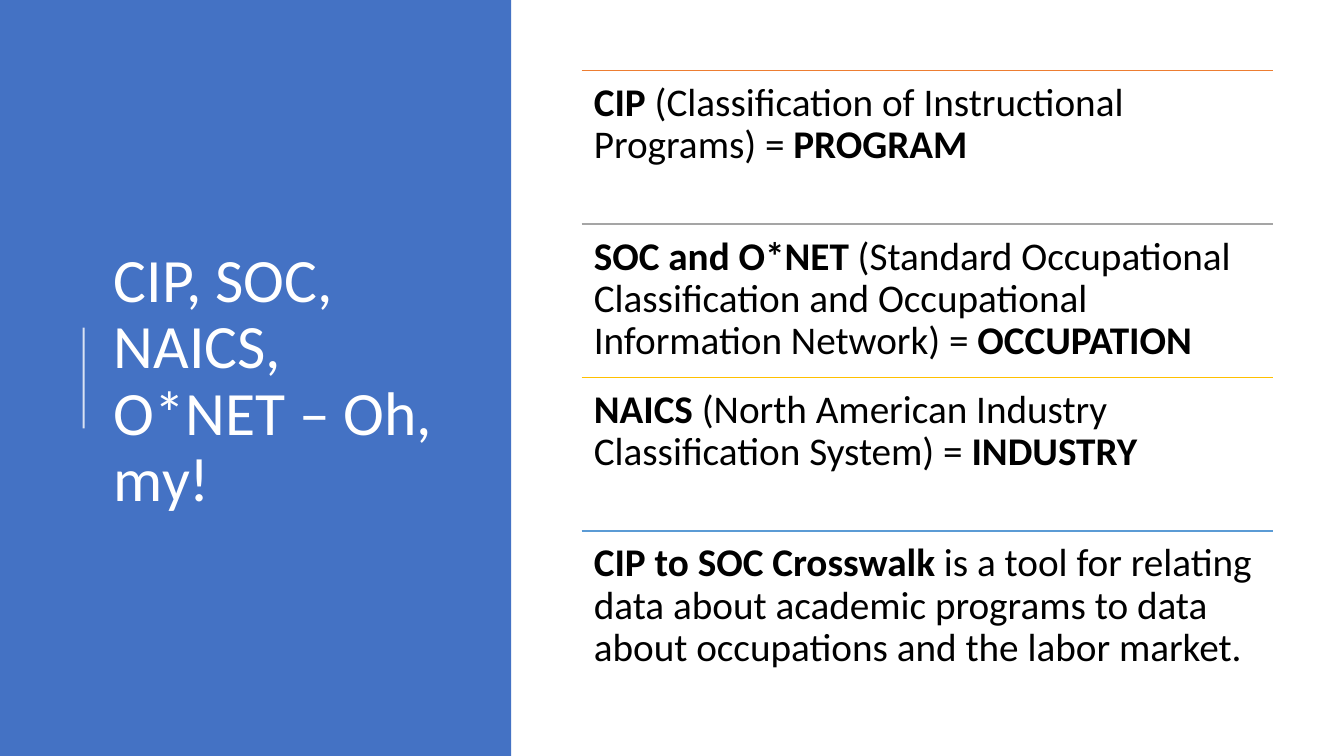
from dataclasses import dataclass

from lxml import etree
from pptx import Presentation
from pptx.dml.color import RGBColor
from pptx.enum.shapes import MSO_CONNECTOR, MSO_SHAPE
from pptx.enum.text import MSO_ANCHOR, MSO_AUTO_SIZE, PP_ALIGN
from pptx.oxml.ns import qn
from pptx.shapes.connector import Connector
from pptx.slide import Slide
from pptx.text.text import Font
from pptx.util import Inches, Pt

STRAIGHT = MSO_CONNECTOR.STRAIGHT
RECTANGLE = MSO_SHAPE.RECTANGLE
MIDDLE = MSO_ANCHOR.MIDDLE
LEFT = PP_ALIGN.LEFT
NO_AUTOFIT = MSO_AUTO_SIZE.NONE

BLUE = RGBColor(0x44, 0x72, 0xC4)
WHITE = RGBColor(0xFF, 0xFF, 0xFF)
BLACK = RGBColor(0x00, 0x00, 0x00)
ORANGE = RGBColor(0xED, 0x7D, 0x31)
GRAY = RGBColor(0xA5, 0xA5, 0xA5)
GOLD = RGBColor(0xFF, 0xC0, 0x00)
LIGHT_BLUE = RGBColor(0x5B, 0x9B, 0xD5)

FONT_NAME = "Calibri"
LINE_SPACING = 0.9
PAGE_WIDTH, PAGE_HEIGHT = Inches(13.33), Inches(7.5)
PANEL_WIDTH = Inches(5.07)
ACCENT_LEFT, ACCENT_TOP, ACCENT_BOTTOM = Inches(0.83), Inches(3.25), Inches(4.25)
LIST_LEFT, LIST_TOP, LIST_WIDTH = Inches(5.77), Inches(0.7), Inches(6.86)
ROW_HEIGHT = Inches(6.09) // 4
ROW_INSET = Inches(0.12)


@dataclass(frozen=True)
class Definition:
    rule_color: RGBColor
    term: str
    meaning: str
    category: str = ""


DEFINITIONS = [
    Definition(ORANGE, "CIP",
               " (Classification of Instructional Programs) = ", "PROGRAM"),
    Definition(GRAY, "SOC and O*NET",
               " (Standard Occupational Classification and Occupational "
               "Information Network) = ", "OCCUPATION"),
    Definition(GOLD, "NAICS",
               " (North American Industry Classification System) = ", "INDUSTRY"),
    Definition(LIGHT_BLUE, "CIP to SOC Crosswalk ",
               "is a tool for relating data about academic programs to data "
               "about occupations and the labor market."),
]


def set_font(font: Font, size: int, color: RGBColor) -> None:
    font.name = FONT_NAME
    font.size = Pt(size)
    font.color.rgb = color


def add_line(page: Slide, start: tuple[int, int], end: tuple[int, int],
             color: RGBColor, width: float) -> Connector:
    line = page.shapes.add_connector(STRAIGHT, *start, *end)
    line.line.color.rgb = color
    line.line.width = Pt(width)
    etree.SubElement(line._element.spPr, qn("a:effectLst"))
    return line


def add_title_panel(page: Slide) -> None:
    title = page.shapes.title
    title.left, title.top = Inches(1.03), Inches(0.78)
    title.width, title.height = Inches(3.69), Inches(6.02)
    frame = title.text_frame
    frame.text = "CIP, SOC, NAICS, O*NET – Oh, my!"
    frame.word_wrap = True
    frame.auto_size = NO_AUTOFIT
    frame.vertical_anchor = MIDDLE
    para = frame.paragraphs[0]
    para.alignment = LEFT
    para.line_spacing = LINE_SPACING
    set_font(para.font, 44, WHITE)

    panel = page.shapes.add_shape(RECTANGLE, 0, 0, PANEL_WIDTH, PAGE_HEIGHT)
    panel.shadow.inherit = False
    panel.fill.solid()
    panel.fill.fore_color.rgb = BLUE
    panel.line.fill.background()
    title._element.addprevious(panel._element)  # panel goes behind the title

    accent = add_line(page, (ACCENT_LEFT, ACCENT_BOTTOM),
                      (ACCENT_LEFT, ACCENT_TOP), WHITE, 1.5)
    color_element = accent._element.spPr.find(".//" + qn("a:srgbClr"))
    etree.SubElement(color_element, qn("a:alpha"), val="80000")


def add_definition(page: Slide, row: int, definition: Definition) -> None:
    top = LIST_TOP + row * ROW_HEIGHT
    add_line(page, (LIST_LEFT, top), (LIST_LEFT + LIST_WIDTH, top),
             definition.rule_color, 1)
    box = page.shapes.add_textbox(LIST_LEFT, top, LIST_WIDTH, ROW_HEIGHT)
    frame = box.text_frame
    frame.word_wrap = True
    frame.margin_left = frame.margin_right = ROW_INSET
    frame.margin_top = frame.margin_bottom = ROW_INSET
    para = frame.paragraphs[0]
    para.line_spacing = LINE_SPACING
    set_font(para.font, 28, BLACK)
    spans = [(definition.term, True), (definition.meaning, False),
             (definition.category, True)]
    for text, bold in spans:
        if text:
            span = para.add_run()
            span.text = text
            span.font.bold = bold


def main() -> None:
    deck = Presentation()
    deck.slide_width, deck.slide_height = PAGE_WIDTH, PAGE_HEIGHT
    title_only = deck.slide_layouts.get_by_name("Title Only")
    page = deck.slides.add_slide(title_only)
    add_title_panel(page)
    for row, definition in enumerate(DEFINITIONS):
        add_definition(page, row, definition)
    deck.save("out.pptx")


if __name__ == "__main__":
    main()
